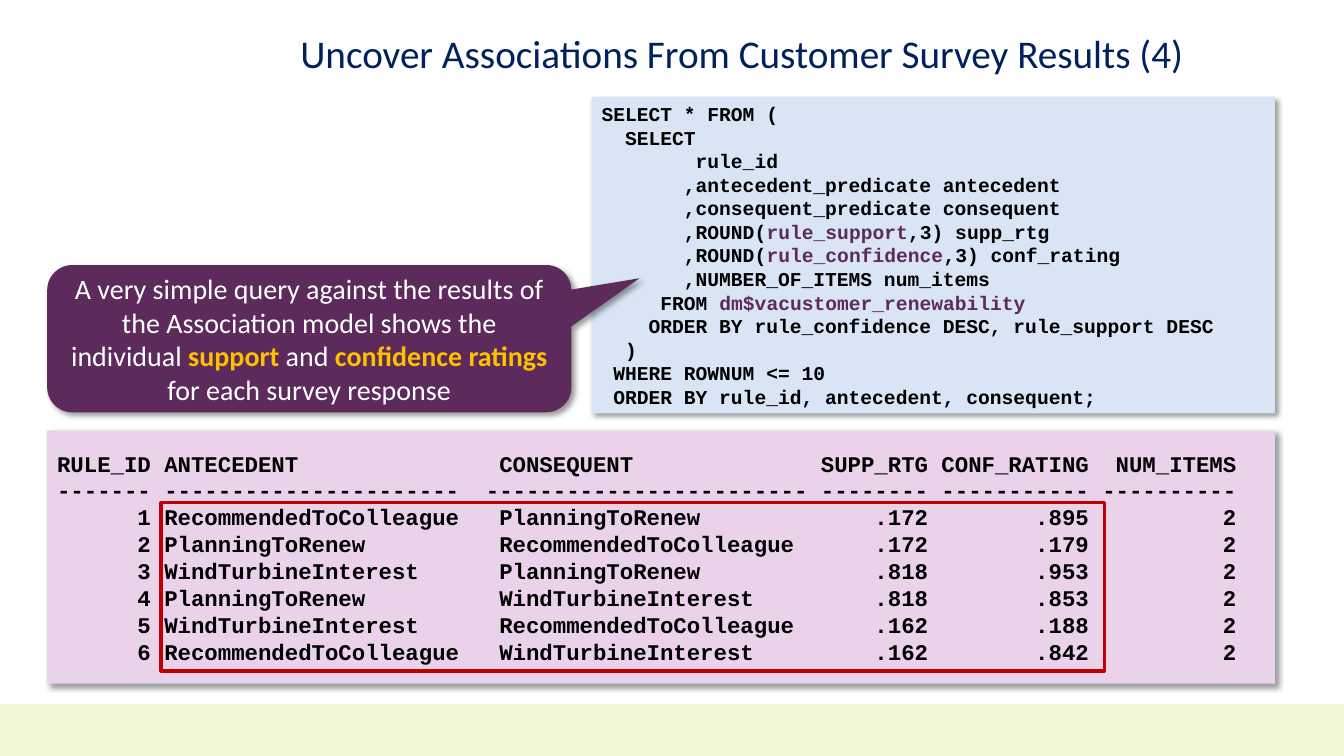
from typing import NamedTuple

from lxml import etree
from pptx import Presentation
from pptx.dml.color import RGBColor
from pptx.enum.shapes import MSO_SHAPE
from pptx.enum.text import MSO_ANCHOR, MSO_AUTO_SIZE, PP_ALIGN
from pptx.oxml.ns import qn
from pptx.util import Cm, Pt

RECT = MSO_SHAPE.RECTANGLE
CALLOUT = MSO_SHAPE.ROUNDED_RECTANGULAR_CALLOUT
MIDDLE = MSO_ANCHOR.MIDDLE
LEFT, CENTER = PP_ALIGN.LEFT, PP_ALIGN.CENTER
FIXED_SIZE = MSO_AUTO_SIZE.NONE
TITLE_ONLY = 5

COLORS = {
    "band": "F2F7D6",
    "title": "002060",
    "query": "D9E4F5",
    "results": "EAD2EA",
    "plum": "5C2A5B",
    "gold": "FFC000",
    "frame": "C00000",
    "black": "000000",
    "white": "FFFFFF",
}
PROSE, CODE = "Calibri", "Courier New"


class Box(NamedTuple):
    left: float
    top: float
    width: float
    height: float


class Span(NamedTuple):
    text: str
    color: str = "black"
    bold: bool = True


class Panel(NamedTuple):
    box: Box
    fill: str
    lines: list[list[Span]]
    font: str
    size: int
    align: PP_ALIGN = LEFT
    kind: MSO_SHAPE = RECT
    adjustments: tuple[float, ...] = ()


class Rule(NamedTuple):
    rule_id: str
    antecedent: str
    consequent: str
    support: str
    confidence: str
    items: str


def rgb(name: str) -> RGBColor:
    return RGBColor.from_string(COLORS[name])


def place(item, box: Box) -> None:
    item.left, item.top, item.width, item.height = map(Cm, box)


def add_span(paragraph, span: Span, font: str, size: int) -> None:
    run = paragraph.add_run()
    run.text = span.text
    run.font.name = font
    run.font.size = Pt(size)
    run.font.bold = span.bold
    run.font.color.rgb = rgb(span.color)


def add_plain_shape(slide, box: Box, kind: MSO_SHAPE = RECT, fill: str = ""):
    """Add a shape without outline or shadow; no fill name leaves it hollow."""
    shape = slide.shapes.add_shape(kind, *map(Cm, box))
    shape.shadow.inherit = False
    shape.line.fill.background()
    if fill:
        shape.fill.solid()
        shape.fill.fore_color.rgb = rgb(fill)
    else:
        shape.fill.background()
    return shape


def add_drop_shadow(shape) -> None:
    effects = shape.fill._xPr.find(qn("a:effectLst"))
    shadow = etree.SubElement(
        effects, qn("a:outerShdw"), blurRad=str(Pt(4)), dist=str(Pt(3)),
        dir="2700000", algn="tl", rotWithShape="0")
    color = etree.SubElement(shadow, qn("a:srgbClr"), val=COLORS["black"])
    etree.SubElement(color, qn("a:alpha"), val="40000")


def add_panel(slide, panel: Panel) -> None:
    shape = add_plain_shape(slide, panel.box, panel.kind, panel.fill)
    for index, value in enumerate(panel.adjustments):
        shape.adjustments[index] = value
    add_drop_shadow(shape)
    frame = shape.text_frame
    frame.word_wrap = True
    frame.vertical_anchor = MIDDLE
    for index, line in enumerate(panel.lines):
        paragraph = frame.add_paragraph() if index else frame.paragraphs[0]
        paragraph.alignment = panel.align
        for span in line:
            add_span(paragraph, span, panel.font, panel.size)


def add_title(slide, text: str) -> None:
    title = slide.shapes.title
    place(title, Box(7.39, 0.48, 26.26, 1.85))
    frame = title.text_frame
    frame.auto_size = FIXED_SIZE
    frame.word_wrap = True
    frame.vertical_anchor = MIDDLE
    frame.margin_left = frame.margin_right = Cm(0.18)
    frame.margin_top = frame.margin_bottom = Cm(0.1)
    paragraph = frame.paragraphs[0]
    paragraph.alignment = LEFT
    paragraph.line_spacing = 0.9
    add_span(paragraph, Span(text, "title", False), PROSE, 28)


def result_line(rule: Rule) -> str:
    return (f"{rule.rule_id:>7} {rule.antecedent:<25}{rule.consequent:<24}"
            f"{rule.support:>8}{rule.confidence:>12}{rule.items:>11}")


COLLEAGUE = "RecommendedToColleague"
RENEW = "PlanningToRenew"
TURBINE = "WindTurbineInterest"
HEADER = Rule("RULE_ID", "ANTECEDENT", "CONSEQUENT", "SUPP_RTG",
              "CONF_RATING", "NUM_ITEMS")
DIVIDER = ("------- ----------------------  ------------------------ "
           "-------- ----------- ----------")
RULES = [
    Rule("1", COLLEAGUE, RENEW, ".172", ".895", "2"),
    Rule("2", RENEW, COLLEAGUE, ".172", ".179", "2"),
    Rule("3", TURBINE, RENEW, ".818", ".953", "2"),
    Rule("4", RENEW, TURBINE, ".818", ".853", "2"),
    Rule("5", TURBINE, COLLEAGUE, ".162", ".188", "2"),
    Rule("6", COLLEAGUE, TURBINE, ".162", ".842", "2"),
]
RESULTS = [result_line(HEADER), DIVIDER, *map(result_line, RULES)]

QUERY = [
    [Span("SELECT * FROM (")],
    [Span("  SELECT")],
    [Span("        rule_id")],
    [Span("       ,antecedent_predicate antecedent")],
    [Span("       ,consequent_predicate consequent")],
    [Span("       ,ROUND("), Span("rule_support", "plum"), Span(",3) supp_rtg")],
    [Span("       ,ROUND("), Span("rule_confidence", "plum"), Span(",3) conf_rating")],
    [Span("       ,NUMBER_OF_ITEMS num_items")],
    [Span("     FROM "), Span("dm$vacustomer_renewability", "plum")],
    [Span("    ORDER BY rule_confidence DESC, rule_support DESC")],
    [Span("  )")],
    [Span(" WHERE ROWNUM <= 10")],
    [Span(" ORDER BY rule_id, antecedent, consequent;")],
]
EXPLANATION = [[
    Span("A very simple query against the results of the Association model "
         "shows the individual ", "white", False),
    Span("support", "gold"),
    Span(" and ", "white", False),
    Span("confidence ratings ", "gold"),
    Span("for each survey response", "white", False),
]]
PANELS = [
    Panel(Box(14.91, 2.44, 17.22, 7.98), "query", QUERY, CODE, 14),
    Panel(Box(1.19, 10.85, 30.94, 6.38), "results",
          [[Span(line)] for line in RESULTS], CODE, 16),
    Panel(Box(1.19, 6.68, 13.21, 3.71), "plum", EXPLANATION, PROSE, 20,
          CENTER, CALLOUT, (0.63, -0.41, 0.17)),
]


def main() -> None:
    deck = Presentation()
    deck.slide_width, deck.slide_height = Cm(33.87), Cm(19.05)
    slide = deck.slides.add_slide(deck.slide_layouts[TITLE_ONLY])
    add_plain_shape(slide, Box(0, 17.75, 33.87, 1.3), fill="band")
    add_title(slide, "Uncover Associations From Customer Survey Results (4)")
    for panel in PANELS:
        add_panel(slide, panel)
    rating_frame = add_plain_shape(slide, Box(4.06, 12.67, 23.77, 4.24))
    rating_frame.line.color.rgb = rgb("frame")
    rating_frame.line.width = Pt(2.25)
    deck.save("out.pptx")


if __name__ == "__main__":
    main()
